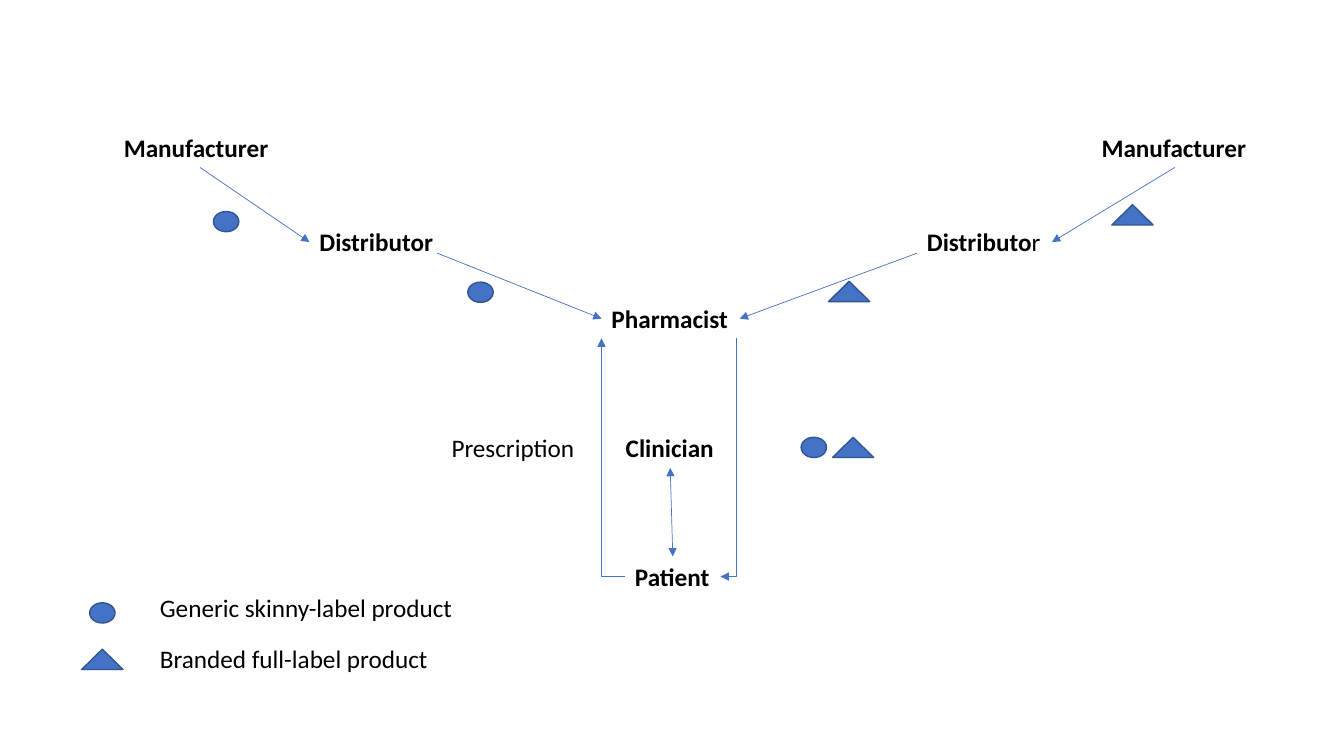
from pptx import Presentation
from pptx.dml.color import RGBColor
from pptx.enum.shapes import MSO_CONNECTOR, MSO_SHAPE
from pptx.enum.text import MSO_AUTO_SIZE
from pptx.oxml.ns import qn
from pptx.util import Cm, Pt
from lxml import etree

BLACK = RGBColor(0x00, 0x00, 0x00)
BLUE = RGBColor(0x44, 0x72, 0xC4)
DARK_BLUE = RGBColor(0x32, 0x54, 0x91)
STRAIGHT, ELBOW = MSO_CONNECTOR.STRAIGHT, MSO_CONNECTOR.ELBOW
OVAL, TRIANGLE = MSO_SHAPE.OVAL, MSO_SHAPE.ISOSCELES_TRIANGLE
FIT = MSO_AUTO_SIZE.SHAPE_TO_FIT_TEXT
LEFT, BOTTOM, RIGHT, TOP = 1, 2, 3, 0

prs = Presentation()
prs.slide_width, prs.slide_height = Cm(33.87), Cm(19.05)
s = prs.slides.add_slide(prs.slide_layouts[6])


def add_text(text, x, y, w, bold=False, plain_end=""):
    sp = s.shapes.add_textbox(Cm(x), Cm(y), Cm(w), Cm(1.02))
    tf = sp.text_frame
    tf.word_wrap = False
    tf.auto_size = FIT
    p = tf.paragraphs[0]
    for part, is_bold in ((text, bold), (plain_end, False)):
        if part:
            r = p.add_run()
            r.text = part
            r.font.name, r.font.size, r.font.bold = "Calibri", Pt(18), is_bold
            r.font.color.rgb = BLACK
    return sp


def add_arrow(kind, begin, end, ends=("tailEnd",)):
    """Each end is an (x, y) point in cm or a (shape, side) pair."""
    c = s.shapes.add_connector(kind, 0, 0, 0, 0)
    if isinstance(begin[0], float):
        c.begin_x, c.begin_y = Cm(begin[0]), Cm(begin[1])
    else:
        c.begin_connect(*begin)
    if isinstance(end[0], float):
        c.end_x, c.end_y = Cm(end[0]), Cm(end[1])
    else:
        c.end_connect(*end)
    c.line.color.rgb, c.line.width = BLUE, Pt(0.5)
    for name in ends:
        etree.SubElement(c.line._get_or_add_ln(), qn("a:" + name), type="triangle")
    etree.SubElement(c._element.spPr, qn("a:effectLst"))
    return c


# Supply chain roles
maker_left = add_text("Manufacturer", 2.87, 3.2, 4.34, bold=True)
dist_left = add_text("Distributor", 7.8, 5.59, 3.56, bold=True)
maker_right = add_text("Manufacturer", 27.51, 3.2, 4.19, bold=True)
dist_right = add_text("Distributo", 23.11, 5.59, 3.4, bold=True, plain_end="r")
pharmacist = add_text("Pharmacist", 15.16, 7.52, 3.48, bold=True)
patient = add_text("Patient", 15.75, 14.02, 2.41, bold=True)
clinician = add_text("Clinician", 15.52, 10.77, 2.74, bold=True)
add_text("Prescription", 11.13, 10.77, 3.63)

# Supply arrows down to the pharmacist
add_arrow(STRAIGHT, (maker_left, BOTTOM), (dist_left, LEFT))
add_arrow(STRAIGHT, (11.02, 6.38), (pharmacist, LEFT))
add_arrow(STRAIGHT, (23.11, 6.38), (pharmacist, RIGHT))
add_arrow(STRAIGHT, (maker_right, BOTTOM), (dist_right, RIGHT))
add_arrow(STRAIGHT, (clinician, BOTTOM), (patient, TOP), ends=("headEnd", "tailEnd"))

# Single-bend arrows between patient and pharmacist
for begin, end, arrowhead in (
    ((15.75, 14.53), (15.16, 8.53), "tailEnd"),
    ((18.16, 14.53), (18.57, 8.53), "headEnd"),
):
    c = add_arrow(ELBOW, begin, end, ends=(arrowhead,))
    c._element.spPr.find(qn("a:prstGeom")).set("prst", "bentConnector2")

# Product markers: circles are generic, triangles are branded
for kind, w, places in (
    (OVAL, 0.64, ((20.19, 11.02), (11.79, 7.11), (5.38, 5.33), (2.26, 15.19))),
    (TRIANGLE, 1.04, ((20.98, 11.02), (20.88, 7.09), (28.02, 5.16), (2.06, 16.36))),
):
    for x, y in places:
        sp = s.shapes.add_shape(kind, Cm(x), Cm(y), Cm(w), Cm(0.51))
        sp.shadow.inherit = False
        sp.fill.solid()
        sp.fill.fore_color.rgb = BLUE
        sp.line.color.rgb, sp.line.width = DARK_BLUE, Pt(1)

# Legend
add_text("Generic skinny-label product", 3.78, 14.81, 7.98)
add_text("Branded full-label product", 3.78, 16.08, 7.34)

prs.save("out.pptx")
